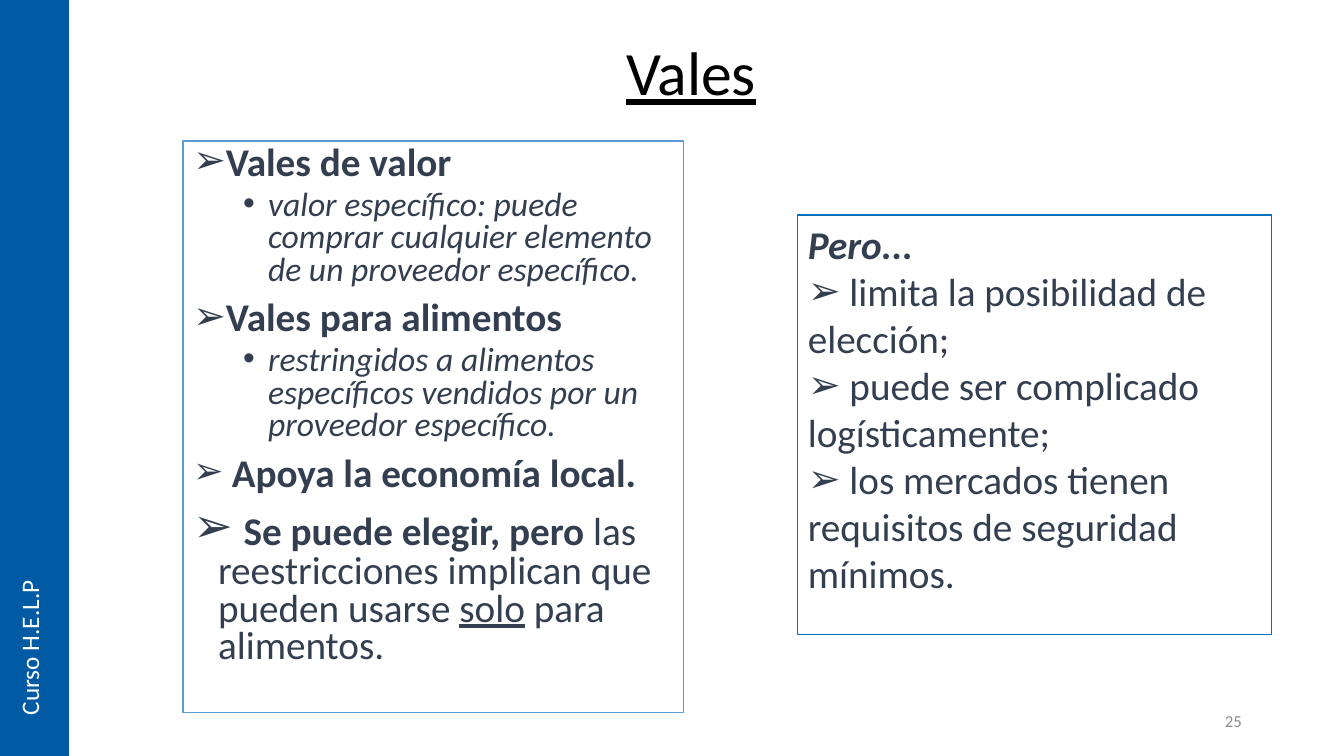
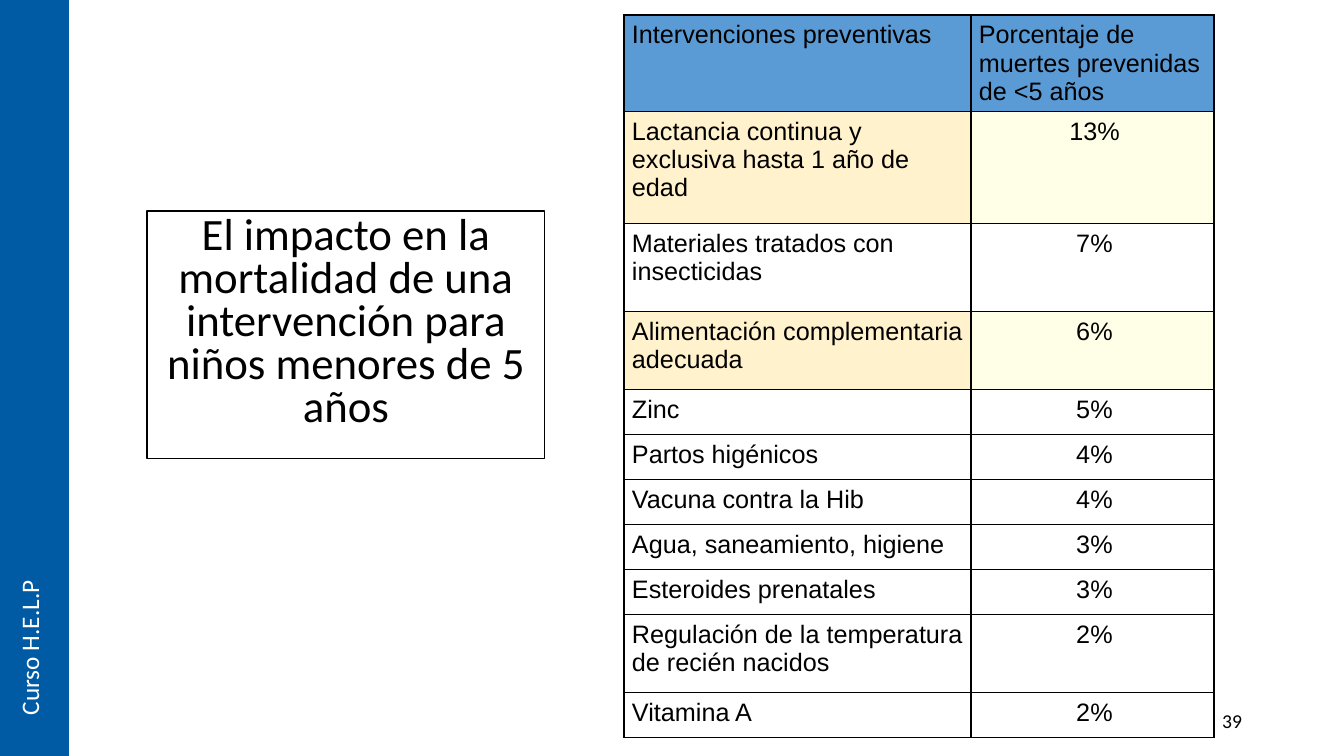
from lxml.etree import SubElement
from pptx import Presentation
from pptx.dml.color import RGBColor
from pptx.enum.shapes import MSO_SHAPE as Shape
from pptx.enum.text import MSO_ANCHOR as Anchor, MSO_AUTO_SIZE as Fit, PP_ALIGN as Align
from pptx.oxml.ns import qn
from pptx.util import Pt

WIDE, HIGH = 1344, 756
SCALE = 12192000 / WIDE

BLACK = RGBColor(0x00, 0x00, 0x00)
WHITE = RGBColor(0xFF, 0xFF, 0xFF)
NAVY = RGBColor(0x33, 0x3F, 0x50)
BAND = RGBColor(0x00, 0x5B, 0xA4)
BLUE = RGBColor(0x00, 0x70, 0xC0)
SKY = RGBColor(0x5B, 0x9B, 0xD5)
GRAY = RGBColor(0x8C, 0x8C, 0x8C)
SAND = RGBColor(0xFF, 0xF2, 0xCC)
CREAM = RGBColor(0xFF, 0xFF, 0xE7)

ARROW, DOT = "➢", "•"

# Runs are (text, size, style), where style holds any of b, i and u.
VALES = [
    (0, [("Vales de valor", 28, "b")]),
    (1, [("valor específico: puede comprar cualquier elemento "
          "de un proveedor específico.", 24, "i")]),
    (0, [("Vales para alimentos", 28, "b")]),
    (1, [("restringidos a alimentos específicos vendidos "
          "por un proveedor específico.", 24, "i")]),
    (0, [(" ", 26, ""), ("Apoya la economía local.", 28, "b")]),
    (0, [(" ", 34, ""), ("Se puede elegir, pero", 28, "b"),
         (" las reestricciones implican que pueden usarse ", 28, ""),
         ("solo", 28, "u"), (" para alimentos.", 28, "")]),
]
LIMITS = [
    " limita la posibilidad de elección;",
    " puede ser complicado logísticamente;",
    " los mercados tienen requisitos de seguridad mínimos.",
]
# Rows are (intervention, share, height, marked).
DEATHS = [
    ("Lactancia continua y exclusiva hasta 1 año de edad", "13%", 112, True),
    ("Materiales tratados con insecticidas", "7%", 88, False),
    ("Alimentación complementaria adecuada", "6%", 78, True),
    ("Zinc", "5%", 45, False),
    ("Partos higénicos", "4%", 45, False),
    ("Vacuna contra la Hib", "4%", 45, False),
    ("Agua, saneamiento, higiene", "3%", 45, False),
    ("Esteroides prenatales", "3%", 45, False),
    ("Regulación de la temperatura de recién nacidos", "2%", 78, False),
    ("Vitamina A", "2%", 45, False),
]


def px(n):
    return round(n * SCALE)


class Deck:
    def __init__(self):
        self.prs = Presentation()
        self.prs.slide_width, self.prs.slide_height = px(WIDE), px(HIGH)
        self.slide = None

    def start(self, layout, number, size, color):
        """Add a slide with the side band and the page number."""
        self.slide = self.prs.slides.add_slide(self.prs.slide_layouts[layout])
        self.rect((0, 0, 69, HIGH), fill=BAND)
        name = self.label((9, 566, 50, 159), "Curso H.E.L.P", 18, WHITE)
        name.word_wrap = False
        name._txBody.bodyPr.set("vert", "vert270")
        page = self.label((950, 701, 302, 40), number, size, color, Align.RIGHT)
        page.vertical_anchor = Anchor.MIDDLE

    def rect(self, box, fill=None, line=None):
        shape = self.slide.shapes.add_shape(Shape.RECTANGLE, *map(px, box))
        shape.shadow.inherit = False
        if fill is None:
            shape.fill.background()
        else:
            shape.fill.solid()
            shape.fill.fore_color.rgb = fill
        self.edge(shape, line)
        return self.setup(shape)

    def edge(self, shape, color):
        if color is None:
            shape.line.fill.background()
        else:
            shape.line.color.rgb = color
            shape.line.width = Pt(0.75)

    def setup(self, shape, anchor=Anchor.TOP):
        frame = shape.text_frame
        frame.word_wrap = True
        frame.auto_size = Fit.NONE
        frame.vertical_anchor = anchor
        return frame

    def holder(self, index, box, line=None, anchor=Anchor.TOP):
        """Place a template placeholder and return its text frame."""
        shape = self.slide.placeholders[index]
        shape.left, shape.top, shape.width, shape.height = map(px, box)
        self.edge(shape, line)
        return self.setup(shape, anchor)

    def label(self, box, text, size, color, align=Align.LEFT):
        shape = self.slide.shapes.add_textbox(*map(px, box))
        frame = self.setup(shape)
        self.para(frame, [(text, size, "")], color, align=align)
        return frame

    def para(self, frame, runs, color, align=Align.LEFT, bullet=None, level=0,
             left=0, hang=0, lines=1.0, before=0, font="Calibri"):
        """Write into the empty first paragraph, or add one after the last."""
        first = not frame.paragraphs[0].runs
        par = frame.paragraphs[0] if first else frame.add_paragraph()
        props = par._p.get_or_add_pPr()
        if bullet:
            props.set("marL", str(px(left)))
            props.set("indent", str(-px(hang)))
            SubElement(props, qn("a:buFont"), typeface="Arial")
            SubElement(props, qn("a:buChar"), char=bullet)
        par.level = level
        par.alignment = align
        par.line_spacing = lines
        par.space_before = Pt(0 if first else before)
        for text, size, style in runs:
            run = par.add_run()
            run.text = text
            face = run.font
            face.name, face.size, face.color.rgb = font, Pt(size), color
            face.bold, face.italic = "b" in style, "i" in style
            face.underline = "u" in style

    def table(self, left, top, cols, rows):
        """Draw rows of (height, fills, texts)."""
        high = sum(row[0] for row in rows)
        box = map(px, (left, top, sum(cols), high))
        grid = self.slide.shapes.add_table(len(rows), len(cols), *box).table
        grid.first_row = grid.horz_banding = False
        for col, width in zip(grid.columns, cols):
            col.width = px(width)
        for r, (height, fills, texts) in enumerate(rows):
            grid.rows[r].height = px(height)
            for c, (fill, text) in enumerate(zip(fills, texts)):
                align = Align.CENTER if r and c else Align.LEFT
                self.cell(grid.cell(r, c), text, fill, align)

    def cell(self, cell, text, fill, align):
        cell.margin_left, cell.margin_right = px(8), px(4)
        cell.margin_top = cell.margin_bottom = px(6)
        props = cell._tc.get_or_add_tcPr()
        for side in "LRTB":
            line = SubElement(props, qn("a:ln" + side), w=str(Pt(1)))
            paint = SubElement(line, qn("a:solidFill"))
            SubElement(paint, qn("a:srgbClr"), val=str(BLACK))
        cell.fill.solid()
        cell.fill.fore_color.rgb = fill
        self.para(cell.text_frame, [(text, 18, "")], BLACK, align, font="Arial")


def vales(deck):
    deck.start(1, "25", 12, GRAY)
    title = deck.holder(0, (616, 16, 501, 119), anchor=Anchor.MIDDLE)
    deck.para(title, [("Vales", 44, "u")], BLACK, lines=0.9)
    body = deck.holder(1, (183, 141, 501, 572), SKY)
    for level, runs in VALES:
        deck.para(body, runs, NAVY, bullet=DOT if level else ARROW,
                  level=level, left=25 + 50 * level, hang=25, lines=0.8,
                  before=5 if level else 10)
    limits = deck.rect((798, 215, 474, 420), line=BLUE)
    deck.para(limits, [("Pero...", 28, "bi")], NAVY)
    for text in LIMITS:
        deck.para(limits, [(text, 28, "")], NAVY, bullet=ARROW)


def impact(deck):
    deck.start(5, "39", 14, BLACK)
    title = deck.holder(0, (147, 211, 398, 248), BLACK)
    deck.para(title, [("El impacto en la mortalidad de una intervención "
                       "para niños menores de 5 años", 32, "")],
              BLACK, Align.CENTER, lines=0.8)
    head = (96, (SKY, SKY), ("Intervenciones preventivas",
                             "Porcentaje de muertes prevenidas de <5 años"))
    rows = [(height, (SAND, CREAM) if marked else (WHITE, WHITE), (name, share))
            for name, share, height, marked in DEATHS]
    deck.table(624, 15, (347, 243), [head] + rows)


def main():
    deck = Deck()
    vales(deck)
    impact(deck)
    deck.prs.save("out.pptx")


if __name__ == "__main__":
    main()
